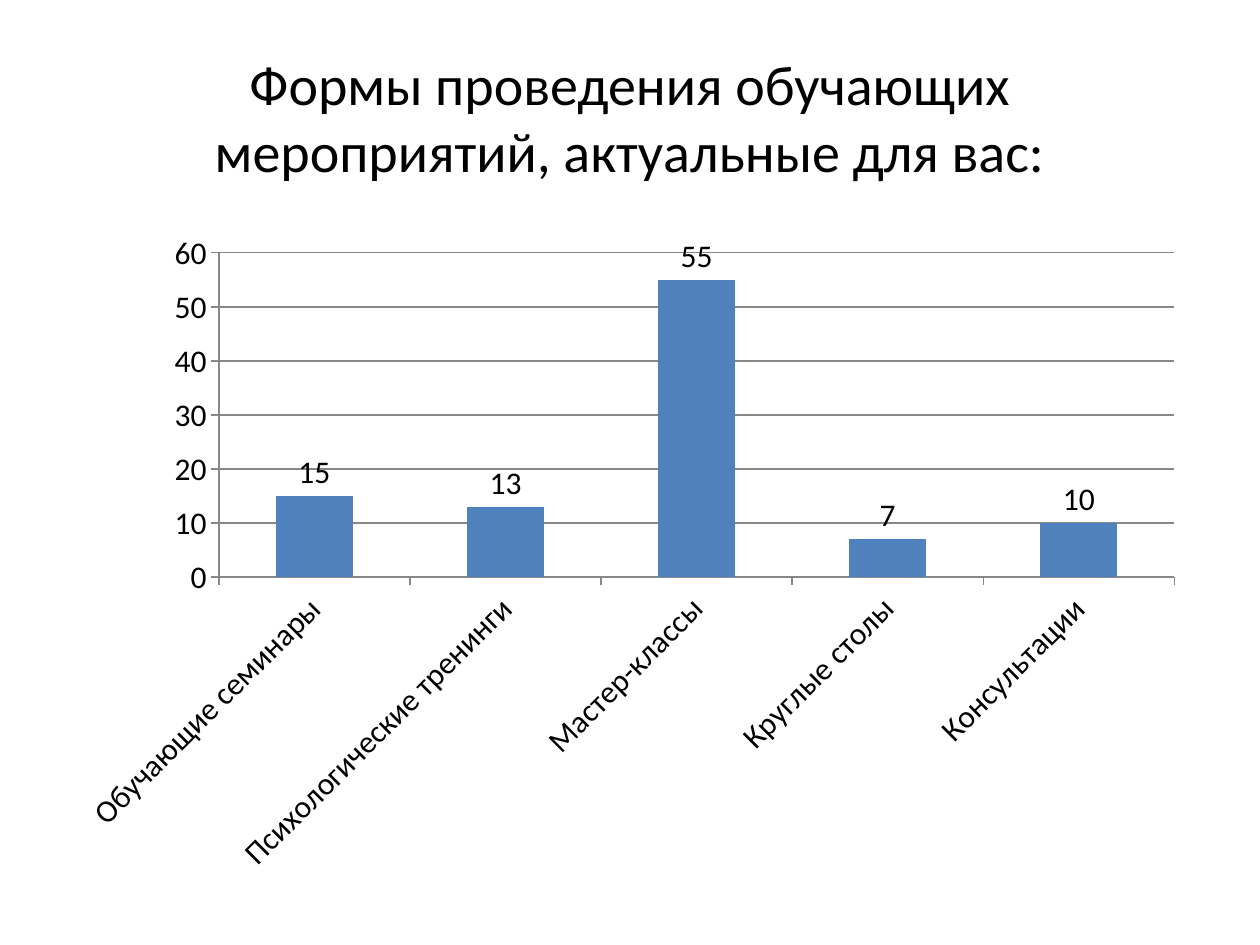
"""Build a slide with a column chart of preferred training formats."""
from pptx import Presentation
from pptx.chart.data import CategoryChartData
from pptx.dml.color import RGBColor
from pptx.enum.chart import XL_CHART_TYPE as ChartType, XL_LABEL_POSITION as LabelPosition
from pptx.enum.chart import XL_TICK_MARK as TickMark
from pptx.enum.text import MSO_ANCHOR as Anchor, PP_ALIGN as Align
from pptx.util import Inches, Pt

COLORS = {"text": "000000", "bars": "4F81BD", "lines": "878787", "background": "FFFFFF"}
FONT = "Calibri"
VOTES = {
    "Обучающие семинары": 15,
    "Психологические тренинги": 13,
    "Мастер-классы": 55,
    "Круглые столы": 7,
    "Консультации": 10,
}


def color(name):
    return RGBColor.from_string(COLORS[name])


def style_font(font, size):
    font.name = FONT
    font.size = Pt(size)
    font.color.rgb = color("text")


deck = Presentation()
deck.slide_width, deck.slide_height = Inches(10), Inches(7.5)
slide = deck.slides.add_slide(deck.slide_layouts[5])
slide.background.fill.solid()
slide.background.fill.fore_color.rgb = color("background")

heading = slide.shapes.title
heading.left, heading.top = Inches(0.5), Inches(0.3)
heading.width, heading.height = Inches(9), Inches(1.25)
heading.text_frame.word_wrap = True
heading.text_frame.vertical_anchor = Anchor.MIDDLE
question = heading.text_frame.paragraphs[0]
question.alignment = Align.CENTER
wording = question.add_run()
wording.text = "Формы проведения обучающих мероприятий, актуальные для вас:"
style_font(wording.font, 32)

survey = CategoryChartData(number_format="General")
survey.categories = VOTES.keys()
survey.add_series("Series 1", VOTES.values())
chart = slide.shapes.add_chart(
    ChartType.COLUMN_CLUSTERED, Inches(0.5), Inches(1.75), Inches(9), Inches(5.28), survey
).chart
chart.has_title = False
chart.has_legend = False
style_font(chart.font, 18)

for axis in (chart.category_axis, chart.value_axis):
    axis.major_tick_mark = TickMark.OUTSIDE
    axis.minor_tick_mark = TickMark.NONE
    axis.format.line.color.rgb = color("lines")
    axis.format.line.width = Pt(0.75)

votes_axis = chart.value_axis
votes_axis.minimum_scale, votes_axis.maximum_scale, votes_axis.major_unit = 0, 60, 10
votes_axis.has_major_gridlines = True
votes_axis.major_gridlines.format.line.color.rgb = color("lines")
votes_axis.major_gridlines.format.line.width = Pt(0.75)

columns = chart.plots[0]
columns.gap_width = 150
columns.vary_by_categories = False
columns.series[0].format.fill.solid()
columns.series[0].format.fill.fore_color.rgb = color("bars")
columns.has_data_labels = True
columns.data_labels.show_value = True
columns.data_labels.position = LabelPosition.OUTSIDE_END
style_font(columns.data_labels.font, 18)

deck.save("out.pptx")
